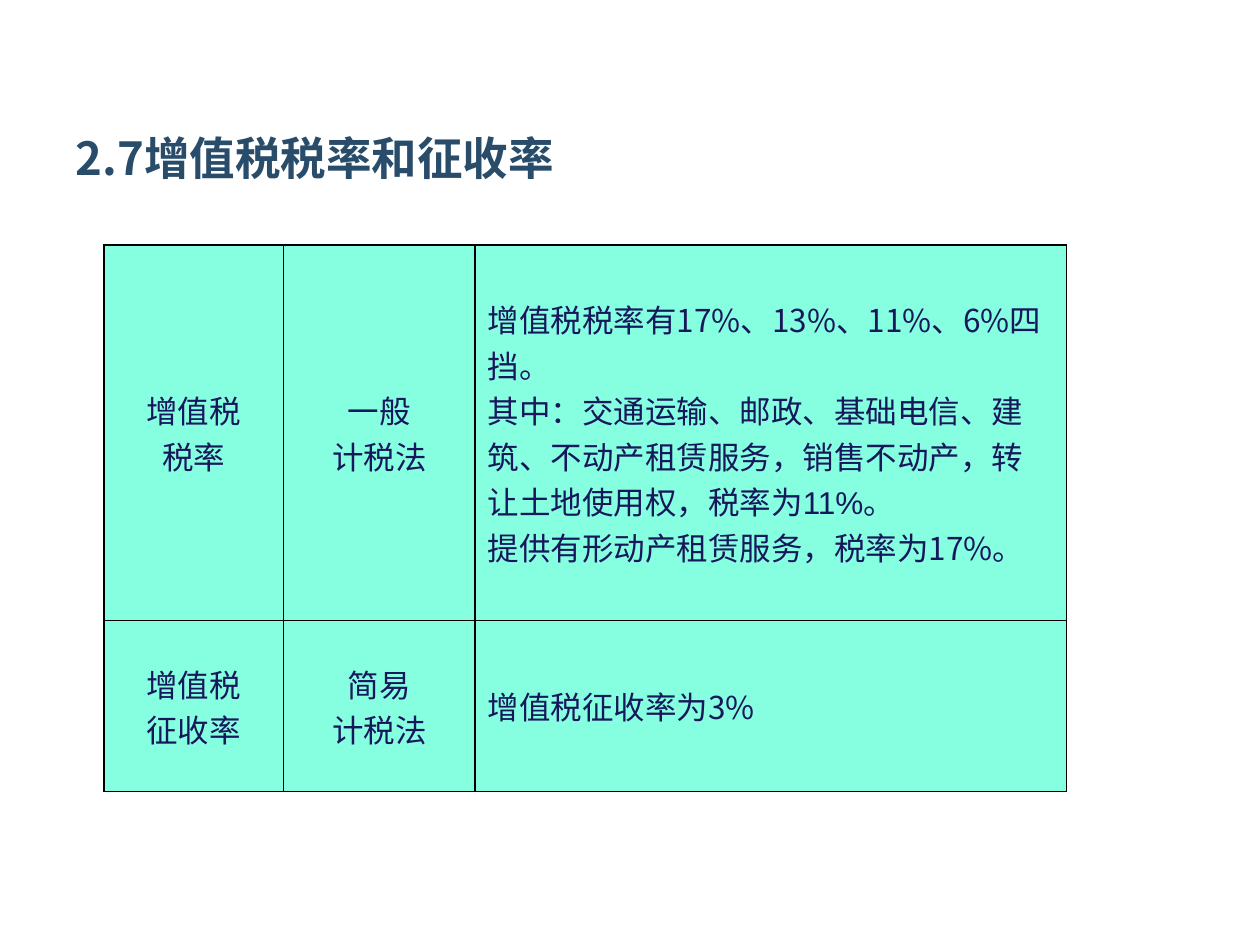
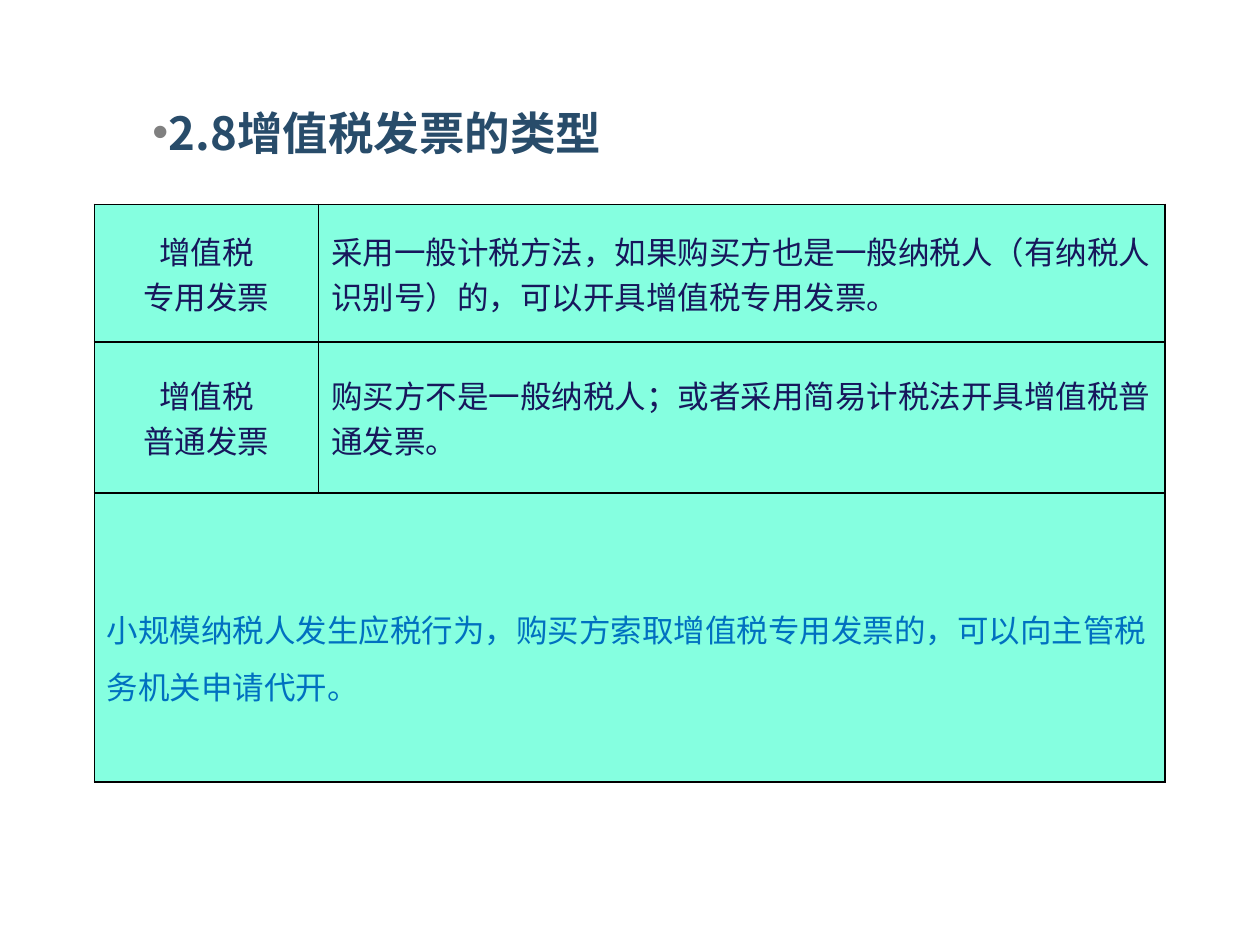
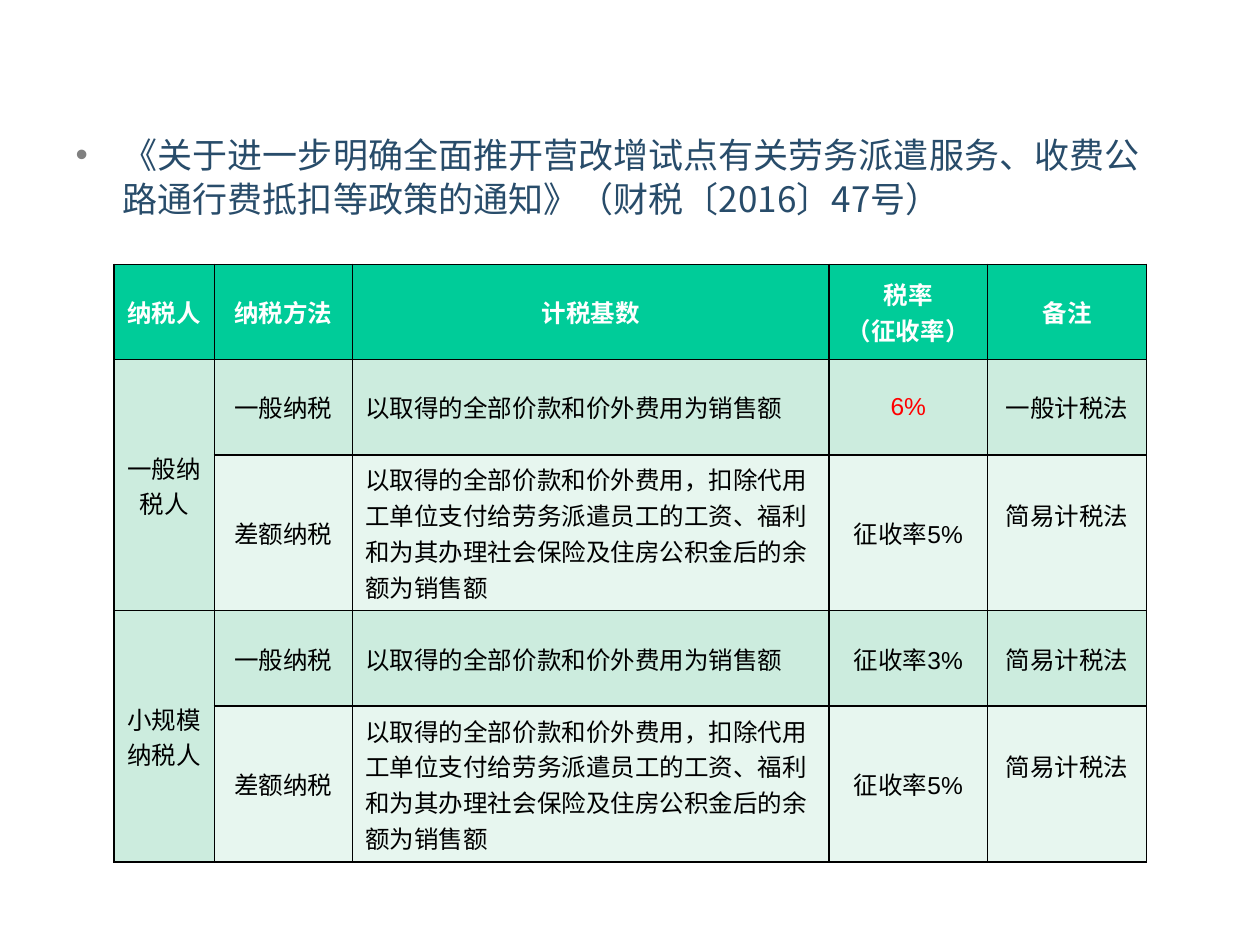
from dataclasses import dataclass

from lxml import etree
from pptx import Presentation
from pptx import util as u
from pptx.dml.color import RGBColor
from pptx.enum import lang, text
from pptx.oxml.ns import qn


@dataclass(frozen=True)
class Theme:
    sans: str = "Noto Sans CJK SC"
    latin: str = "Arial"
    heading: str = "284C6A"
    bullet: str = "808080"
    ink: str = "17175C"
    note: str = "0070C0"
    mint: str = "85FFE0"
    header: str = "00CC99"
    band: str = "CCECDE"
    light_band: str = "E7F6EF"
    black: str = "000000"
    white: str = "FFFFFF"
    alert: str = "FF0000"
    heading_size: int = 26
    notice_size: int = 20
    table_size: int = 18
    small_size: int = 14
    border: float = 1


THEME = Theme()
CENTER, LEFT = text.PP_ALIGN.CENTER, text.PP_ALIGN.LEFT


@dataclass(frozen=True)
class Entry:
    lines: tuple
    align: int = CENTER
    size: int = THEME.table_size
    color: str = THEME.ink
    fill: str = THEME.mint
    fonts: tuple = (THEME.sans,)
    bold: bool = False
    spacing: float = 1.0
    push_down: float = 0
    push_up: float = 0


def style_font(font, size, color, bold=False, name=THEME.sans):
    font.size = u.Pt(size)
    font.bold = bold
    font.color.rgb = RGBColor.from_string(color)
    font.name = name
    font.language_id = lang.MSO_LANGUAGE_ID.SIMPLIFIED_CHINESE
    etree.SubElement(font._element, qn("a:ea"), typeface=THEME.sans)


def add_bullet(paragraph, margin, indent):
    props = paragraph._p.get_or_add_pPr()
    props.set("marL", str(u.Cm(margin)))
    props.set("indent", str(u.Cm(indent)))
    tint = etree.SubElement(props, qn("a:buClr"))
    etree.SubElement(tint, qn("a:srgbClr"), val=THEME.bullet)
    etree.SubElement(props, qn("a:buChar"), char="•")


def place(placeholder, box):
    placeholder.left, placeholder.top, placeholder.width, placeholder.height = map(u.Cm, box)
    placeholder.text_frame.auto_size = text.MSO_AUTO_SIZE.NONE
    return placeholder.text_frame


def add_title(slide, box, wording):
    frame = place(slide.shapes.title, box)
    frame.vertical_anchor = text.MSO_ANCHOR.MIDDLE
    heading = frame.paragraphs[0]
    heading.text = wording
    heading.alignment = LEFT
    style_font(heading.font, THEME.heading_size, THEME.heading, True)


def add_body(slide, box, wording, size, bold, level, margin, indent, align):
    frame = place(slide.placeholders[1], box)
    point = frame.paragraphs[0]
    point.text = wording
    point.level = level
    add_bullet(point, margin, indent)
    point.alignment = align
    point.line_spacing = 1.05
    point.space_before = u.Pt(0)
    style_font(point.font, size, THEME.heading, bold)


def draw_borders(cell):
    props = cell._tc.get_or_add_tcPr()
    for side in ("lnL", "lnR", "lnT", "lnB"):
        line = etree.SubElement(props, qn(f"a:{side}"), w=str(u.Pt(THEME.border)))
        paint = etree.SubElement(line, qn("a:solidFill"))
        etree.SubElement(paint, qn("a:srgbClr"), val=THEME.black)


def fill_cell(cell, entry):
    cell.fill.solid()
    cell.fill.fore_color.rgb = RGBColor.from_string(entry.fill)
    cell.vertical_anchor = text.MSO_ANCHOR.MIDDLE
    cell.margin_top = u.Cm(0.13 + entry.push_down)
    cell.margin_bottom = u.Cm(0.13 + entry.push_up)
    frame = cell.text_frame
    for index, wording in enumerate(entry.lines):
        paragraph = frame.add_paragraph() if index else frame.paragraphs[0]
        paragraph.text = wording
        paragraph.alignment = entry.align
        paragraph.line_spacing = entry.spacing
        font_name = entry.fonts[index % len(entry.fonts)]
        style_font(paragraph.font, entry.size, entry.color, entry.bold, font_name)


def add_grid(slide, left, top, widths, heights, rows, merges=()):
    table = slide.shapes.add_table(
        len(heights), len(widths), u.Cm(left), u.Cm(top),
        u.Cm(sum(widths)), u.Cm(sum(heights))).table
    table.first_row = table.horz_banding = False
    for column, width in zip(table.columns, widths):
        column.width = u.Cm(width)
    for row, height in zip(table.rows, heights):
        row.height = u.Cm(height)
    for cell in table.iter_cells():
        draw_borders(cell)
    for first, last in merges:
        table.cell(*first).merge(table.cell(*last))
    for r, entries in enumerate(rows):
        for c, entry in enumerate(entries):
            if entry:
                fill_cell(table.cell(r, c), entry)


def new_slide(deck, titled):
    slide = deck.slides.add_slide(deck.slide_layouts[5 if titled else 1])
    if not titled:
        title = slide.shapes.title._element
        title.getparent().remove(title)
    return slide


def build_rates(deck):
    slide = new_slide(deck, True)
    add_title(slide, (1.27, 1.9, 22.43, 2.54), "2.7增值税税率和征收率")
    rates = Entry(
        ("增值税税率有17%、13%、11%、6%四挡。",
         "其中：交通运输、邮政、基础电信、建筑、不动产租赁服务，销售不动产，"
         "转让土地使用权，税率为11%。",
         "提供有形动产租赁服务，税率为17%。"),
        LEFT, fonts=(THEME.sans, THEME.latin, THEME.sans))
    rows = [
        [Entry(("增值税", "税率")), Entry(("一般", "计税法")), rates],
        [Entry(("增值税", "征收率")), Entry(("简易", "计税法")),
         Entry(("增值税征收率为3%",), LEFT)],
    ]
    add_grid(slide, 2.1, 4.94, (3.61, 3.87, 11.92), (7.57, 3.45), rows)


def build_invoices(deck):
    slide = new_slide(deck, False)
    add_body(slide, (1.7, 1.93, 21.8, 2.0), "2.8增值税发票的类型",
             THEME.heading_size, True, 2, 0, 1.12, text.PP_ALIGN.JUSTIFY)
    rows = [
        [Entry(("增值税", "专用发票")),
         Entry(("采用一般计税方法，如果购买方也是一般纳税人（有纳税人识别号）的，"
                "可以开具增值税专用发票。",), LEFT)],
        [Entry(("增值税", "普通发票")),
         Entry(("购买方不是一般纳税人；或者采用简易计税法开具增值税普通发票。",), LEFT)],
        [Entry(("小规模纳税人发生应税行为，购买方索取增值税专用发票的，"
                "可以向主管税务机关申请代开。",),
               LEFT, color=THEME.note, spacing=1.25, push_down=0.57), None],
    ]
    add_grid(slide, 1.9, 4.12, (4.52, 17.07), (2.77, 3.05, 5.82), rows,
             [((2, 0), (2, 1))])


def dispatch_entry(wording, fill, color=THEME.black, **options):
    return Entry(tuple(wording.split("\n")), size=THEME.small_size, fill=fill,
                 color=color, fonts=(THEME.latin,), **options)


def taxpayer_rows(taxpayer, rate, rate_color, method):
    full, net = THEME.band, THEME.light_band
    return [
        [dispatch_entry(taxpayer, full), dispatch_entry("一般纳税", full),
         dispatch_entry("以取得的全部价款和价外费用为销售额", full, align=LEFT),
         dispatch_entry(rate, full, rate_color), dispatch_entry(method, full)],
        [None, dispatch_entry("差额纳税", net),
         dispatch_entry("以取得的全部价款和价外费用，扣除代用工单位支付给劳务派遣员工的工资、"
                        "福利和为其办理社会保险及住房公积金后的余额为销售额", net, align=LEFT),
         dispatch_entry("征收率5%", net),
         dispatch_entry("简易计税法", net, push_up=0.73)],
    ]


def build_dispatch(deck):
    slide = new_slide(deck, False)
    add_body(slide, (1.27, 2.52, 22.43, 15.26),
             "《关于进一步明确全面推开营改增试点有关劳务派遣服务、收费公路通行费抵扣等政策的通知》"
             "（财税〔2016〕47号）",
             THEME.notice_size, False, 0, 0.95, -0.95, LEFT)
    headings = ("纳税人", "纳税方法", "计税基数", "税率\n（征收率）", "备注")
    rows = [
        [dispatch_entry(name, THEME.header, THEME.white, bold=True) for name in headings],
        *taxpayer_rows("一般纳税人", "6%", THEME.alert, "一般计税法"),
        *taxpayer_rows("小规模纳税人", "征收率3%", THEME.black, "简易计税法"),
    ]
    add_grid(slide, 2.3, 5.33, (2.02, 2.79, 9.6, 3.2, 3.2),
             (1.92, 1.92, 3.12, 1.92, 3.12), rows,
             [((1, 0), (2, 0)), ((3, 0), (4, 0))])


def main():
    deck = Presentation()
    deck.slide_width, deck.slide_height = u.Cm(25.4), u.Cm(19.05)
    for build in (build_rates, build_invoices, build_dispatch):
        build(deck)
    deck.save("out.pptx")


if __name__ == "__main__":
    main()
